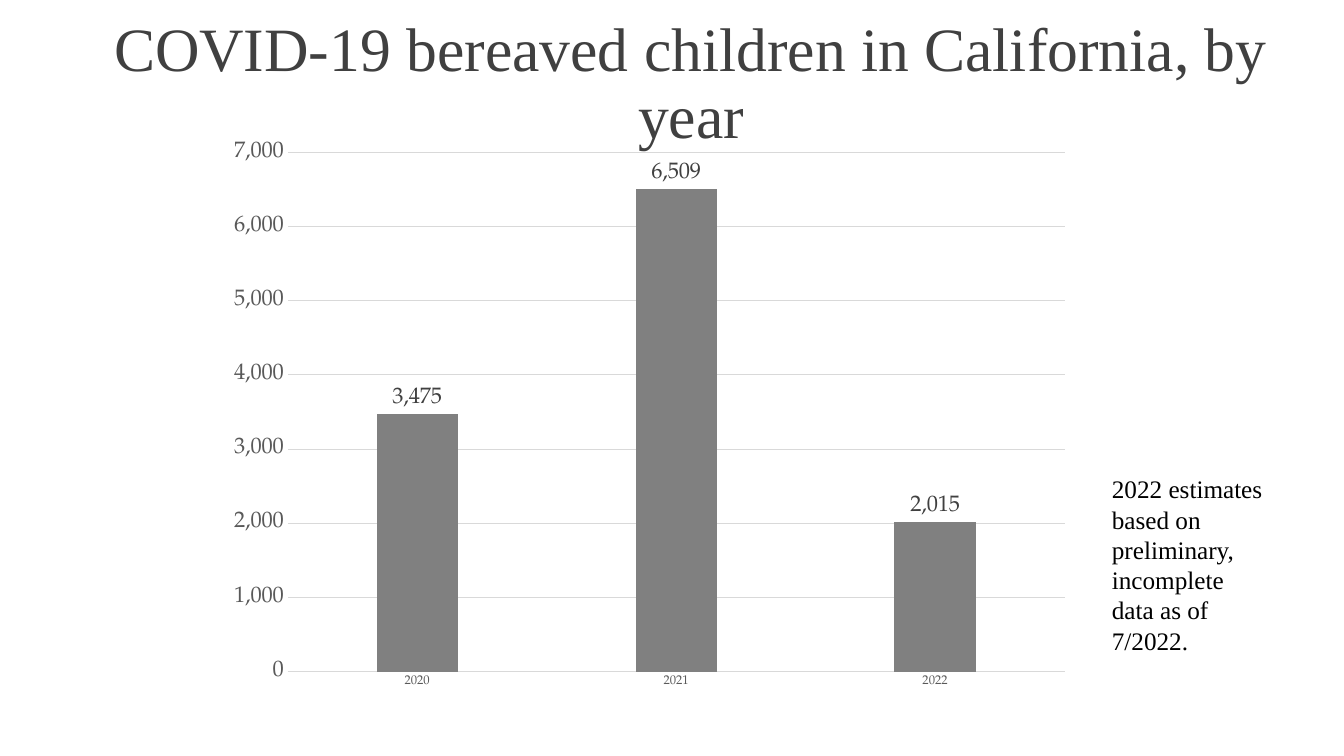
from dataclasses import dataclass

from pptx import Presentation
from pptx.chart.data import CategoryChartData
from pptx.dml.color import RGBColor
from pptx.enum.chart import XL_CHART_TYPE, XL_LABEL_POSITION, XL_TICK_MARK
from pptx.enum.text import MSO_ANCHOR, MSO_AUTO_SIZE, PP_ALIGN
from pptx.util import Inches, Pt

COLUMNS = XL_CHART_TYPE.COLUMN_CLUSTERED
ABOVE_BAR = XL_LABEL_POSITION.OUTSIDE_END
NO_TICK = XL_TICK_MARK.NONE
MIDDLE = MSO_ANCHOR.MIDDLE
CENTER = PP_ALIGN.CENTER
NO_FIT = MSO_AUTO_SIZE.NONE
GROW = MSO_AUTO_SIZE.SHAPE_TO_FIT_TEXT
TITLE_ONLY = 5


@dataclass(frozen=True)
class Theme:
    text_font: str = "Times New Roman"
    chart_font: str = "TeX Gyre Pagella"
    dark: str = "404040"
    axis: str = "595959"
    grid: str = "D9D9D9"
    bar: str = "808080"
    black: str = "000000"
    title_size: float = 44
    note_size: float = 18
    value_size: float = 16
    chart_size: float = 10
    category_size: float = 9
    line_width: float = 0.75


def apply_format(target, values):
    for name, value in values.items():
        setattr(target, name, value)


def set_font(font, name, size, color):
    apply_format(font, {"name": name, "size": Pt(size), "bold": False})
    font.color.rgb = RGBColor.from_string(color)


class SlideBuilder:
    def __init__(self, deck, theme):
        self.theme = theme
        self.page = deck.slides.add_slide(deck.slide_layouts[TITLE_ONLY])

    def fill_text(self, box, text, size, color, frame_format, para_format):
        apply_format(box.text_frame, {"word_wrap": True, **frame_format})
        para = box.text_frame.paragraphs[0]
        apply_format(para, para_format)
        span = para.add_run()
        span.text = text
        set_font(span.font, self.theme.text_font, size, color)

    def title(self, text, left, top, width, height):
        box = self.page.shapes.title
        apply_format(box, {
            "left": Inches(left), "top": Inches(top),
            "width": Inches(width), "height": Inches(height),
        })
        self.fill_text(
            box, text, self.theme.title_size, self.theme.dark,
            {"vertical_anchor": MIDDLE, "auto_size": NO_FIT},
            {"alignment": CENTER, "line_spacing": 0.9, "space_before": Pt(0)},
        )

    def note(self, text, left, top, width, height):
        box = self.page.shapes.add_textbox(
            Inches(left), Inches(top), Inches(width), Inches(height))
        self.fill_text(box, text, self.theme.note_size, self.theme.black,
                       {"auto_size": GROW}, {})

    def line(self, line_format):
        line_format.color.rgb = RGBColor.from_string(self.theme.grid)
        line_format.width = Pt(self.theme.line_width)

    def axis(self, axis, size):
        apply_format(axis, {"major_tick_mark": NO_TICK, "minor_tick_mark": NO_TICK})
        set_font(axis.tick_labels.font, self.theme.chart_font, size, self.theme.axis)

    def column_chart(self, name, values_by_category, left, top, width, height):
        theme = self.theme
        data = CategoryChartData(number_format="#,##0")
        data.categories = list(values_by_category)
        data.add_series(name, list(values_by_category.values()))
        chart = self.page.shapes.add_chart(
            COLUMNS, Inches(left), Inches(top), Inches(width), Inches(height), data).chart
        apply_format(chart, {"has_legend": False, "has_title": False})
        set_font(chart.font, theme.text_font, theme.chart_size, theme.black)

        self.axis(chart.category_axis, theme.category_size)
        self.line(chart.category_axis.format.line)

        value_axis = chart.value_axis
        self.axis(value_axis, theme.value_size)
        apply_format(value_axis, {
            "minimum_scale": 0, "maximum_scale": 7000, "major_unit": 1000,
            "has_major_gridlines": True,
        })
        value_axis.format.line.fill.background()
        self.line(value_axis.major_gridlines.format.line)
        apply_format(value_axis.tick_labels, {
            "number_format": "#,##0", "number_format_is_linked": False})

        plot = chart.plots[0]
        apply_format(plot, {"gap_width": 219, "overlap": -27, "vary_by_categories": False})
        bars = plot.series[0]
        bars.format.fill.solid()
        bars.format.fill.fore_color.rgb = RGBColor.from_string(theme.bar)
        labels = bars.data_labels
        apply_format(labels, {
            "show_value": True, "position": ABOVE_BAR,
            "number_format": "#,##0", "number_format_is_linked": False,
        })
        set_font(labels.font, theme.chart_font, theme.value_size, theme.dark)


def main():
    deck = Presentation()
    apply_format(deck, {"slide_width": Inches(13.33), "slide_height": Inches(7.5)})
    slide = SlideBuilder(deck, Theme())
    slide.title("COVID-19 bereaved children in California, by year", 0.55, 0.4, 12.61, 0.89)
    slide.column_chart("Series 1", {"2020": 3475, "2021": 6509, "2022": 2015},
                       2.15, 1.29, 8.58, 5.65)
    slide.note("2022 estimates based on preliminary, incomplete data as of 7/2022.",
               10.93, 4.65, 1.73, 1.92)
    deck.save("out.pptx")


if __name__ == "__main__":
    main()
